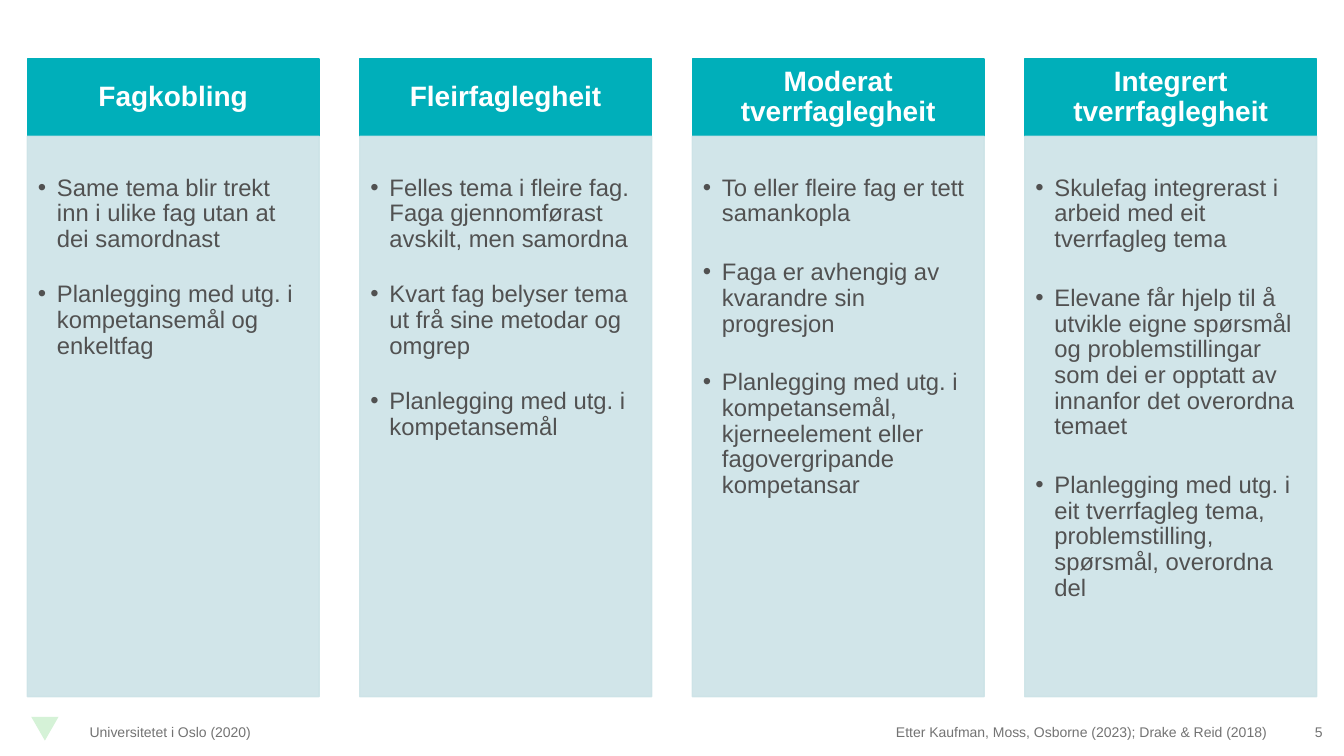
from dataclasses import dataclass

from lxml.etree import SubElement
from pptx import Presentation
from pptx.dml.color import RGBColor as Rgb
from pptx.enum.shapes import MSO_SHAPE as Preset
from pptx.enum.text import MSO_ANCHOR as Anchor, PP_ALIGN as Align
from pptx.oxml.ns import qn
from pptx.util import Pt


@dataclass(frozen=True)
class Theme:
    font: str = "Arial"
    teal: Rgb = Rgb(0x00, 0xAF, 0xBA)
    pale: Rgb = Rgb(0xCC, 0xE3, 0xE7)
    mint: Rgb = Rgb(0xD5, 0xF2, 0xD7)
    white: Rgb = Rgb(0xFF, 0xFF, 0xFF)
    body_ink: Rgb = Rgb(0x51, 0x51, 0x51)
    footer_ink: Rgb = Rgb(0x73, 0x73, 0x73)
    heading_size: int = 20
    body_size: int = 17
    footer_size: int = 10
    line_spacing: float = 0.9
    bullet_indent: float = 13.7


class SlideBuilder:
    def __init__(self, slide, theme):
        self.shapes = slide.shapes
        self.theme = theme

    def _block(self, preset, box, color, opacity=100):
        block = self.shapes.add_shape(preset, *map(Pt, box))
        block.shadow.inherit = False
        block.line.width = Pt(1)
        for fill in (block.fill, block.line.fill):
            fill.solid()
            fill.fore_color.rgb = color
        if opacity < 100:
            for tint in block._element.spPr.iter(qn("a:srgbClr")):
                SubElement(tint, qn("a:alpha"), val=str(opacity * 1000))
        return block

    def _frame(self, holder, insets, anchor):
        frame = holder.text_frame
        frame.word_wrap = True
        frame.vertical_anchor = anchor
        (frame.margin_left, frame.margin_top,
         frame.margin_right, frame.margin_bottom) = map(Pt, insets)
        return frame

    def _write(self, paragraph, words, size, color, align, bold=False):
        paragraph.alignment = align
        run = paragraph.add_run()
        run.text = words
        run.font.name = self.theme.font
        run.font.size = Pt(size)
        run.font.bold = bold
        run.font.color.rgb = color

    def heading(self, box, words):
        theme = self.theme
        block = self._block(Preset.RECTANGLE, box, theme.teal)
        paragraph = self._frame(block, (11.4, 6.5, 11.4, 6.5), Anchor.MIDDLE).paragraphs[0]
        paragraph.line_spacing = theme.line_spacing
        self._write(paragraph, words, theme.heading_size, theme.white, Align.CENTER, True)

    def bullet_panel(self, box, points, gap):
        theme = self.theme
        panel = self._block(Preset.RECTANGLE, box, theme.pale, opacity=90)
        frame = self._frame(panel, (7.5, 28.2, 9.5, 10.8), Anchor.TOP)
        for index, point in enumerate(points):
            paragraph = frame.add_paragraph() if index else frame.paragraphs[0]
            paragraph.line_spacing = theme.line_spacing
            paragraph.space_before = Pt(gap if index else 0)
            self._write(paragraph, point, theme.body_size, theme.body_ink, Align.LEFT)
            properties = paragraph._p.get_or_add_pPr()
            properties.set("marL", str(Pt(theme.bullet_indent)))
            properties.set("indent", str(-Pt(theme.bullet_indent)))
            SubElement(properties, qn("a:buFont"), typeface=theme.font)
            SubElement(properties, qn("a:buChar"), char="•")

    def footer(self, box, words, align=Align.LEFT, tab=None):
        holder = self.shapes.add_textbox(*map(Pt, box))
        paragraph = self._frame(holder, (0, 0, 0, 0), Anchor.MIDDLE).paragraphs[0]
        self._write(paragraph, words, self.theme.footer_size, self.theme.footer_ink, align)
        if tab:
            stops = SubElement(paragraph._p.get_or_add_pPr(), qn("a:tabLst"))
            SubElement(stops, qn("a:tab"), pos=str(Pt(tab)), algn="l")

    def emblem(self, box):
        triangle = self._block(Preset.ISOSCELES_TRIANGLE, box, self.theme.mint)
        triangle.line.fill.background()
        triangle.rotation = 180


# Heading, gap between points, points
COLUMNS = [
    ("Fagkobling", 21, [
        "Same tema blir trekt inn i ulike fag utan at dei samordnast",
        "Planlegging med utg. i kompetansemål og enkeltfag",
    ]),
    ("Fleirfaglegheit", 21, [
        "Felles tema i fleire fag. Faga gjennomførast avskilt, men samordna",
        "Kvart fag belyser tema ut frå sine metodar og omgrep",
        "Planlegging med utg. i kompetansemål",
    ]),
    ("Moderat tverrfaglegheit", 23.5, [
        "To eller fleire fag er tett samankopla",
        "Faga er avhengig av kvarandre sin progresjon",
        "Planlegging med utg. i kompetansemål, kjerneelement eller "
        "fagovergripande kompetansar",
    ]),
    ("Integrert tverrfaglegheit", 23.5, [
        "Skulefag integrerast i arbeid med eit tverrfagleg tema",
        "Elevane får hjelp til å utvikle eigne spørsmål og problemstillingar "
        "som dei er opptatt av innanfor det overordna temaet",
        "Planlegging med utg. i eit tverrfagleg tema, problemstilling, "
        "spørsmål, overordna del",
    ]),
]
FIRST_LEFT, COLUMN_STEP, COLUMN_WIDTH = 19.5, 237.5, 208.5
HEADING_TOP, HEADING_HEIGHT, PANEL_HEIGHT = 42, 55.3, 400.3
FOOTER_TOP, FOOTER_HEIGHT = 505, 35


def main():
    deck = Presentation()
    deck.slide_width, deck.slide_height = Pt(960), Pt(540)
    builder = SlideBuilder(deck.slides.add_slide(deck.slide_layouts[6]), Theme())

    builder.emblem((22.3, 512, 19.5, 17))
    for index, (title, gap, points) in enumerate(COLUMNS):
        left = FIRST_LEFT + index * COLUMN_STEP
        builder.heading((left, HEADING_TOP, COLUMN_WIDTH, HEADING_HEIGHT), title)
        builder.bullet_panel(
            (left, HEADING_TOP + HEADING_HEIGHT, COLUMN_WIDTH, PANEL_HEIGHT), points, gap)

    builder.footer(
        (64, FOOTER_TOP, 860, FOOTER_HEIGHT),
        "Universitetet i Oslo (2020)\tEtter Kaufman, Moss, Osborne (2023); Drake & Reid (2018)",
        tab=576)
    builder.footer((924.5, FOOTER_TOP, 35, FOOTER_HEIGHT), "5", Align.CENTER)
    deck.save("out.pptx")


if __name__ == "__main__":
    main()
